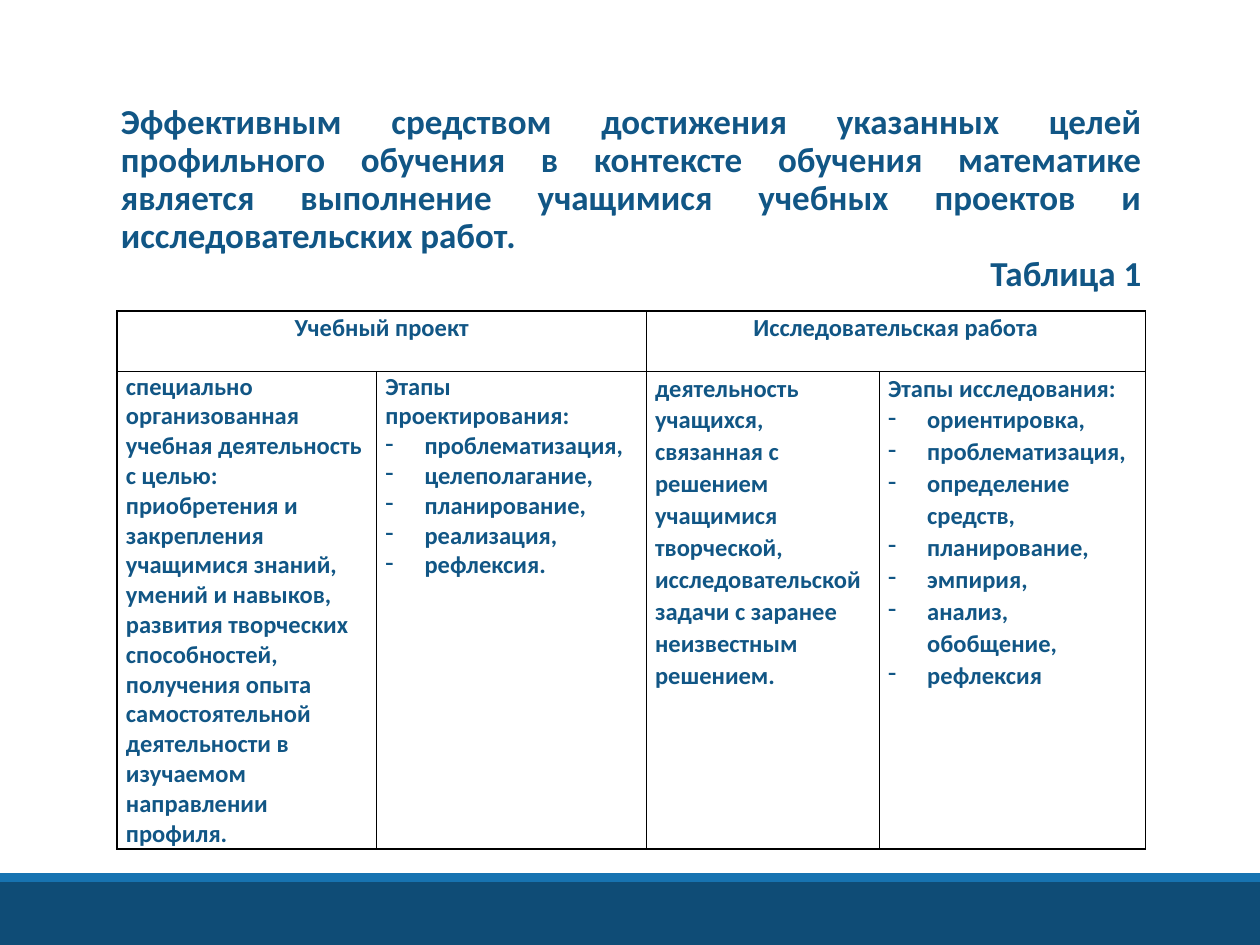
from lxml.etree import SubElement
from pptx import Presentation
from pptx.dml.color import RGBColor
from pptx.enum.shapes import MSO_SHAPE
from pptx.enum.text import MSO_ANCHOR, MSO_AUTO_SIZE, PP_ALIGN
from pptx.oxml.ns import qn
from pptx.util import Inches, Pt

TEXT_BLUE = RGBColor(0x11, 0x56, 0x85)
DARK_BLUE = RGBColor(0x0F, 0x4C, 0x76)
BRIGHT_BLUE = RGBColor(0x17, 0x73, 0xB1)
WHITE = RGBColor(0xFF, 0xFF, 0xFF)
BLACK = RGBColor(0x00, 0x00, 0x00)

TITLE = (
    "Эффективным средством достижения указанных целей профильного обучения "
    "в контексте обучения математике является выполнение учащимися учебных "
    "проектов и исследовательских работ."
)
COLUMN_WIDTHS = (2.06, 2.14, 1.85, 2.11)
ROW_HEIGHTS = (0.48, 3.73)
HEADERS = ("Учебный проект", "Исследовательская работа")
PROJECT_GOALS = (
    "специально организованная учебная деятельность с целью:",
    "приобретения и закрепления учащимися знаний, умений и навыков,",
    "развития творческих способностей,",
    "получения опыта самостоятельной деятельности в изучаемом направлении профиля.",
)
PROJECT_STAGES = (
    "проблематизация,", "целеполагание,", "планирование,", "реализация,", "рефлексия.",
)
RESEARCH_MEANING = (
    "деятельность учащихся, связанная с решением учащимися творческой, "
    "исследовательской задачи с заранее неизвестным решением."
)
RESEARCH_STAGES = (
    "ориентировка,", "проблематизация,", "определение средств,", "планирование,",
    "эмпирия,", "анализ, обобщение,", "рефлексия",
)


def add_dash(paragraph):
    properties = paragraph._p.get_or_add_pPr()
    indent = Inches(0.31)
    properties.set("marL", str(indent))
    properties.set("indent", str(-indent))
    SubElement(properties, qn("a:buChar")).set("char", "-")


def write(frame, text, size=14, align=PP_ALIGN.LEFT, spacing=1.0, dash=False):
    """Add one paragraph, filling the first one if the frame is still empty."""
    paragraph = frame.paragraphs[0] if not frame.text else frame.add_paragraph()
    paragraph.alignment = align
    paragraph.line_spacing = spacing
    paragraph.space_before = paragraph.space_after = Pt(0)
    if dash:
        add_dash(paragraph)
    run = paragraph.add_run()
    run.text = text
    run.font.name = "Calibri"
    run.font.size = Pt(size)
    run.font.bold = True
    run.font.color.rgb = TEXT_BLUE


class SlideBuilder:
    def __init__(self, slide):
        self.slide = slide

    def band(self, top, height, color):
        shape = self.slide.shapes.add_shape(
            MSO_SHAPE.RECTANGLE, 0, Inches(top), Inches(10), Inches(height))
        shape.shadow.inherit = False
        shape.fill.solid()
        shape.fill.fore_color.rgb = color
        shape.line.fill.background()

    def title(self, left, top, width, height):
        title = self.slide.shapes.title
        title.left, title.top = Inches(left), Inches(top)
        title.width, title.height = Inches(width), Inches(height)
        frame = title.text_frame
        frame.word_wrap = True
        frame.auto_size = MSO_AUTO_SIZE.NONE
        frame.vertical_anchor = MSO_ANCHOR.TOP
        frame.margin_top = Inches(0.27)
        write(frame, TITLE, size=20, align=PP_ALIGN.JUSTIFY, spacing=0.9)
        write(frame, "Таблица 1", size=20, align=PP_ALIGN.RIGHT, spacing=0.9)

    def table(self, left, top):
        table = self.slide.shapes.add_table(
            len(ROW_HEIGHTS), len(COLUMN_WIDTHS), Inches(left), Inches(top),
            Inches(sum(COLUMN_WIDTHS)), Inches(sum(ROW_HEIGHTS))).table
        table.first_row = table.horz_banding = False
        for column, width in zip(table.columns, COLUMN_WIDTHS):
            column.width = Inches(width)
        for row, height in zip(table.rows, ROW_HEIGHTS):
            row.height = Inches(height)
        for cell in table.iter_cells():
            self.style_cell(cell)
        return table

    def style_cell(self, cell):
        cell.margin_left = cell.margin_right = Inches(0.07)
        cell.margin_top = cell.margin_bottom = 0
        properties = cell._tc.get_or_add_tcPr()
        for side in ("lnL", "lnR", "lnT", "lnB"):
            line = SubElement(properties, qn(f"a:{side}"))
            line.set("w", str(Pt(1)))
            fill = SubElement(line, qn("a:solidFill"))
            SubElement(fill, qn("a:srgbClr")).set("val", str(BLACK))
        cell.fill.solid()
        cell.fill.fore_color.rgb = WHITE

    def stages(self, cell, heading, items, spacing):
        write(cell.text_frame, heading, spacing=spacing)
        for item in items:
            write(cell.text_frame, item, spacing=spacing, dash=True)


def main():
    presentation = Presentation()
    presentation.slide_width, presentation.slide_height = Inches(10), Inches(7.5)
    title_only = presentation.slide_layouts[5]
    builder = SlideBuilder(presentation.slides.add_slide(title_only))

    builder.band(7, 0.5, DARK_BLUE)
    builder.band(6.93, 0.07, BRIGHT_BLUE)
    builder.title(0.86, 0.56, 8.3, 1.91)

    table = builder.table(0.93, 2.47)
    for column, header in zip((0, 2), HEADERS):
        cell = table.cell(0, column)
        cell.merge(table.cell(0, column + 1))
        write(cell.text_frame, header, align=PP_ALIGN.CENTER, spacing=1.07)
    for goal in PROJECT_GOALS:
        write(table.cell(1, 0).text_frame, goal)
    builder.stages(table.cell(1, 1), "Этапы проектирования:", PROJECT_STAGES, 1.0)
    write(table.cell(1, 2).text_frame, RESEARCH_MEANING, spacing=1.07)
    builder.stages(table.cell(1, 3), "Этапы исследования:", RESEARCH_STAGES, 1.07)

    presentation.save("out.pptx")


if __name__ == "__main__":
    main()
